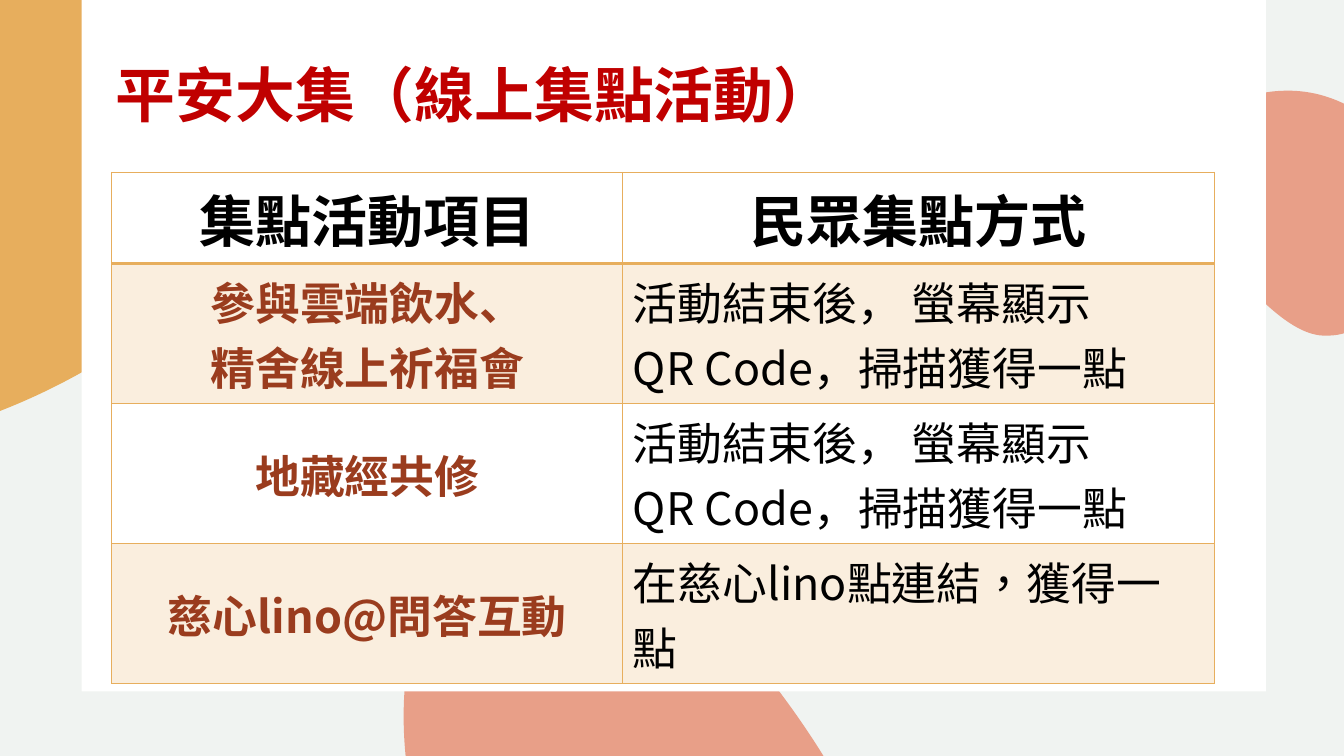
import math

import lxml.etree
import pptx
import pptx.dml.color
import pptx.enum.shapes
import pptx.enum.text
import pptx.oxml.ns
import pptx.util

Inches = pptx.util.Inches
Pt = pptx.util.Pt
RGBColor = pptx.dml.color.RGBColor
Align = pptx.enum.text.PP_ALIGN
Anchor = pptx.enum.text.MSO_ANCHOR
qn = pptx.oxml.ns.qn

FONT = "Noto Sans CJK TC"
PAGE_GREY = RGBColor(0xF0, 0xF3, 0xF1)
CORAL = RGBColor(0xE8, 0x9F, 0x88)
AMBER = RGBColor(0xE7, 0xAE, 0x5D)
WHITE = RGBColor(0xFF, 0xFF, 0xFF)
BLACK = RGBColor(0x00, 0x00, 0x00)
RED = RGBColor(0xC0, 0x00, 0x00)
BROWN = RGBColor(0x9A, 0x3C, 0x1E)

RIGHT_BLOB = [
    (12.78, 0.9), (13.21, 0.9), (13.58, 1.12), (13.87, 1.45),
    (14.1, 1.7), (14.07, 1.98), (14.12, 2.32),
    (14.02, 2.73), (13.66, 3.33), (13.17, 3.33),
    (13.13, 3.33), (13.09, 3.33), (13.05, 3.32),
    (12.81, 3.27), (12.57, 3.03), (12.4, 2.87),
    (12.21, 2.69), (12.08, 2.49), (11.96, 2.27),
    (11.7, 1.79), (11.89, 1.11), (12.42, 0.95),
    (12.55, 0.91), (12.67, 0.9), (12.78, 0.9),
]
BOTTOM_BLOB = [
    (5.7, 5.02), (5.7, 5.02), (5.7, 5.02), (5.7, 5.02),
    (6.44, 5.02), (7.12, 6.08), (7.53, 6.6),
    (7.93, 7.1), (8.3, 7.65), (8.56, 8.23),
    (8.81, 8.78), (9.04, 9.51), (8.83, 10.1),
    (8.76, 10.3), (8.65, 10.49), (8.53, 10.7),
    (8.26, 11.16), (7.91, 11.58), (7.35, 11.65),
    (7.31, 11.65), (7.27, 11.66), (7.24, 11.66),
    (6.53, 11.66), (6.06, 11.08), (5.57, 10.62),
    (4.5, 9.58), (3.76, 7.89), (4.08, 6.37),
    (4.23, 5.61), (4.9, 5.02), (5.7, 5.02),
]
LEFT_BLOB = [
    (2.73, -2.2), (3.34, -2.07), (3.81, -1.59), (3.87, -0.66),
    (3.95, 0.56), (3.06, 1.73), (2.27, 2.57),
    (1.52, 3.35), (0.56, 3.93), (-0.47, 4.24),
    (-0.81, 4.34), (-1.15, 4.41), (-1.5, 4.45),
    (-1.79, 4.49), (-2.09, 4.5), (-2.37, 4.43),
    (-2.45, 4.42), (-2.53, 4.39), (-2.61, 4.36),
    (-3.44, 4.01), (-3.41, 3.02), (-2.89, 2.42),
    (-2.43, 1.9), (-1.87, 1.52), (-1.4, 1),
    (-0.82, 0.35), (-0.38, -0.34), (0.11, -1.05),
    (0.7, -1.9), (1.85, -2.4), (2.73, -2.2),
]
LEFT_BLOB_CENTER = (0.41, 1.17)
LEFT_BLOB_TURN = 12.7

SCAN_STEPS = "活動結束後， 螢幕顯示\nQR Code，掃描獲得一點"
ROWS = [
    ("集點活動項目", "民眾集點方式"),
    ("參與雲端飲水、\n精舍線上祈福會", SCAN_STEPS),
    ("地藏經共修", SCAN_STEPS),
    ("慈心lino@問答互動", "在慈心lino點連結，獲得一點"),
]
COLUMN_WIDTHS = (5.07, 5.87)
HEADER_HEIGHT = 0.82
ROW_HEIGHT = 1.29


def paint(shape, color):
    """Give a shape a plain fill without line or shadow."""
    shape.fill.solid()
    shape.fill.fore_color.rgb = color
    shape.line.fill.background()
    shape.shadow.inherit = False


def turn_back(knots, center, degrees):
    """Rotate knots anticlockwise around a center."""
    cos, sin = math.cos(math.radians(degrees)), math.sin(math.radians(degrees))
    offsets = [(x - center[0], y - center[1]) for x, y in knots]
    return [(center[0] + x * cos + y * sin, center[1] + y * cos - x * sin) for x, y in offsets]


def add_blob(page, knots, color):
    """Draw a closed outline of cubic curves."""
    points = [(Inches(x), Inches(y)) for x, y in knots]
    builder = page.shapes.build_freeform(*points[0])
    builder.add_line_segments(points[1:], close=True)
    blob = builder.convert_to_shape()
    lines = list(blob.element.iter(qn("a:lnTo")))
    for start in range(0, len(lines) - 2, 3):
        curve = lxml.etree.Element(qn("a:cubicBezTo"))
        lines[start].addprevious(curve)
        for line in lines[start:start + 3]:
            curve.append(line[0])
            line.getparent().remove(line)
    paint(blob, color)
    return blob


def write_text(frame, text, size, color, bold, align):
    """Write and format the paragraphs of a text frame."""
    frame.text = text
    for para in frame.paragraphs:
        para.alignment = align
        for span in para.runs:
            span.font.name = FONT
            span.font.size = Pt(size)
            span.font.bold = bold
            span.font.color.rgb = color
            east_asian = lxml.etree.SubElement(span.font._element, qn("a:ea"))
            east_asian.set("typeface", FONT)


def add_title(page, text):
    """Fill the title placeholder and bring it to the front."""
    title = page.shapes.title
    title.left, title.top = Inches(1.05), Inches(0.43)
    title.width, title.height = Inches(11.24), Inches(0.95)
    frame = title.text_frame
    frame.margin_left = frame.margin_right = Inches(0.1)
    frame.margin_top = frame.margin_bottom = Inches(0.1)
    frame.vertical_anchor = Anchor.BOTTOM
    frame.auto_size = pptx.enum.text.MSO_AUTO_SIZE.NONE
    write_text(frame, text, 42.7, RED, True, Align.LEFT)
    title.element.getparent().append(title.element)


def set_border(cell, side, width):
    """Draw one amber edge of a cell."""
    edge = lxml.etree.SubElement(cell._tc.get_or_add_tcPr(), qn(f"a:ln{side}"))
    edge.set("w", str(Pt(width)))
    fill = lxml.etree.SubElement(edge, qn("a:solidFill"))
    lxml.etree.SubElement(fill, qn("a:srgbClr")).set("val", str(AMBER))


def style_cell(cell, text, row, column):
    """Format a cell by its place in the table."""
    header = row == 0
    for side in "LRTB":
        set_border(cell, side, 2 if header and side == "B" else 1)
    if row % 2:
        cell.fill.solid()
        cell.fill.fore_color.rgb = AMBER
        tint = cell._tc.tcPr.find(qn("a:solidFill"))[0]
        lxml.etree.SubElement(tint, qn("a:alpha")).set("val", "20000")
    else:
        cell.fill.background()
    cell.vertical_anchor = Anchor.MIDDLE
    label = column == 0
    color = BROWN if label and not header else BLACK
    align = Align.CENTER if label or header else Align.LEFT
    write_text(cell.text_frame, text, 40 if header else 32, color, label or header, align)


def add_points_table(page):
    """Add the table of activities and ways to collect points."""
    height = HEADER_HEIGHT + ROW_HEIGHT * (len(ROWS) - 1)
    table = page.shapes.add_table(
        len(ROWS), len(COLUMN_WIDTHS), Inches(1.11), Inches(1.71),
        Inches(sum(COLUMN_WIDTHS)), Inches(height)).table
    table.first_row = table.horz_banding = False
    for column, width in zip(table.columns, COLUMN_WIDTHS):
        column.width = Inches(width)
    for row, texts in enumerate(ROWS):
        table.rows[row].height = Inches(ROW_HEIGHT if row else HEADER_HEIGHT)
        for column, text in enumerate(texts):
            style_cell(table.cell(row, column), text, row, column)
    link_cell = table.cell(len(ROWS) - 1, 1)
    link_cell.text_frame.paragraphs[0].runs[0].font._element.set("lang", "zh-TW")


def main():
    """Build the slide and save the deck."""
    deck = pptx.Presentation()
    deck.slide_width, deck.slide_height = Inches(40) // 3, Inches(7.5)
    page = deck.slides.add_slide(deck.slide_layouts[5])
    page.background.fill.solid()
    page.background.fill.fore_color.rgb = PAGE_GREY
    add_blob(page, RIGHT_BLOB, CORAL)
    add_blob(page, BOTTOM_BLOB, CORAL)
    left_knots = turn_back(LEFT_BLOB, LEFT_BLOB_CENTER, LEFT_BLOB_TURN)
    add_blob(page, left_knots, AMBER).rotation = LEFT_BLOB_TURN
    panel = page.shapes.add_shape(
        pptx.enum.shapes.MSO_SHAPE.RECTANGLE,
        Inches(0.81), Inches(0), Inches(11.75), Inches(6.86))
    paint(panel, WHITE)
    add_title(page, "平安大集（線上集點活動）")
    add_points_table(page)
    deck.save("out.pptx")


if __name__ == "__main__":
    main()
